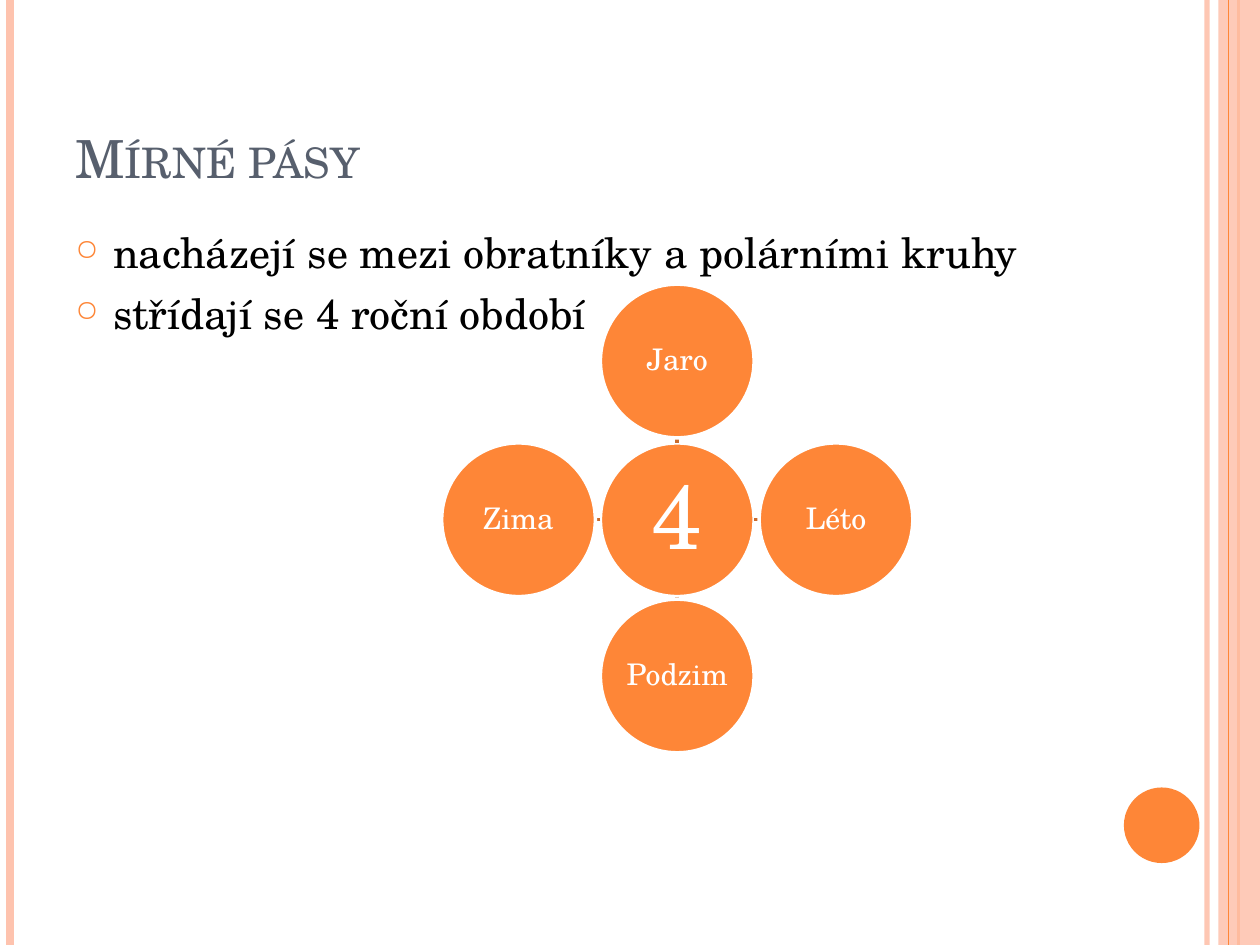
from lxml import etree
from pptx import Presentation
from pptx import util as u
from pptx.dml.color import RGBColor
from pptx.enum import shapes, text
from pptx.oxml.ns import qn

FONT = "TeX Gyre Schola"
ORANGE = RGBColor(0xFE, 0x86, 0x37)
PEACH = RGBColor(0xFE, 0xC3, 0xAE)
BROWN = RGBColor(0xCB, 0x6B, 0x2C)
SLATE = RGBColor(0x57, 0x5F, 0x6D)
BLACK = RGBColor(0, 0, 0)
WHITE = RGBColor(0xFF, 0xFF, 0xFF)

# Content
TITLE = "Mírné pásy"
BULLETS = ["nacházejí se mezi obratníky a polárními kruhy",
           "střídají se 4 roční období"]
HUB = "4"
# Season, direction across and down, distance from the hub
SEASONS = [("Jaro", 0, -1, 1.26), ("Léto", 1, 0, 1.26),
           ("Podzim", 0, 1, 1.24), ("Zima", -1, 0, 1.26)]
# Border lines: x, colour, width, opacity in percent
LINES_BELOW = [(9.58, PEACH, 3, 93), (0.08, PEACH, 4.5, 100), (9.83, ORANGE, 1.5, 100)]
LINES_ABOVE = [(9.75, ORANGE, 0.75, 100)]

# Layout
W, H = 10, 7.5
BAND = 0.33
LEFT, TEXT_W = 0.5, 8.17
HUB_X, HUB_Y, DIAMETER = 5.375, 4.125, 1.22

prs = Presentation()
prs.slide_width, prs.slide_height = u.Inches(W), u.Inches(H)
slide = prs.slides.add_slide(prs.slide_layouts[6])


def set_opacity(part, percent):
    color = part._element.spPr.find(".//" + qn("a:srgbClr"))
    etree.SubElement(color, qn("a:alpha"), val=str(percent * 1000))


def add_line(x1, y1, x2, y2, color, width, opacity=100):
    line = slide.shapes.add_connector(
        shapes.MSO_CONNECTOR.STRAIGHT, *map(u.Inches, (x1, y1, x2, y2)))
    line.line.color.rgb = color
    line.line.width = u.Pt(width)
    if opacity < 100:
        set_opacity(line, opacity)
    etree.SubElement(line._element.spPr, qn("a:effectLst"))


def add_borders(lines):
    for x, *style in lines:
        add_line(x, 0, x, H, *style)


def add_filled(kind, x, y, w, h, color):
    sp = slide.shapes.add_shape(kind, *map(u.Inches, (x, y, w, h)))
    sp.shadow.inherit = False
    sp.fill.solid()
    sp.fill.fore_color.rgb = color
    sp.line.fill.background()
    return sp


def format_runs(p, size, color):
    for r in p.runs:
        r.font.name = FONT
        r.font.size = u.Pt(size)
        r.font.color.rgb = color


def add_circle(label, cx, cy, size, inset):
    sp = add_filled(shapes.MSO_SHAPE.OVAL, cx - DIAMETER / 2, cy - DIAMETER / 2,
                    DIAMETER, DIAMETER, ORANGE)
    sp.line.color.rgb = WHITE
    sp.line.width = u.Pt(2)
    tf = sp.text_frame
    tf.margin_left = tf.margin_right = tf.margin_top = tf.margin_bottom = u.Inches(inset)
    tf.vertical_anchor = text.MSO_ANCHOR.MIDDLE
    tf.text = label
    p = tf.paragraphs[0]
    p.alignment = text.PP_ALIGN.CENTER
    p.line_spacing = 0.9
    format_runs(p, size, WHITE)


def add_text(y, h, content):
    box = slide.shapes.add_textbox(*map(u.Inches, (LEFT, y, TEXT_W, h)))
    tf = box.text_frame
    tf.word_wrap = True
    tf.text = content
    return tf


def add_bullet(p):
    p.space_before = u.Pt(6)
    pPr = p._p.get_or_add_pPr()
    pPr.set("marL", str(u.Inches(0.3)))
    pPr.set("indent", str(u.Inches(-0.3)))
    color = etree.SubElement(pPr, qn("a:buClr"))
    etree.SubElement(color, qn("a:srgbClr"), val=str(ORANGE))
    etree.SubElement(pPr, qn("a:buSzPct"), val="70000")
    etree.SubElement(pPr, qn("a:buChar"), char="○")


# Border decoration
add_borders(LINES_BELOW)
band = add_filled(shapes.MSO_SHAPE.RECTANGLE, W - BAND, 0, BAND, H, PEACH)
set_opacity(band, 87)
add_borders(LINES_ABOVE)
add_filled(shapes.MSO_SHAPE.OVAL, 8.92, 6.25, 0.6, 0.6, ORANGE)

# Title
tf = add_text(0.3, 1.25, TITLE)
tf.vertical_anchor = text.MSO_ANCHOR.BOTTOM
format_runs(tf.paragraphs[0], 30, SLATE)
for r in tf.paragraphs[0].runs:
    r.font._element.set("cap", "small")

# Bullets
tf = add_text(1.75, 5.33, "\n".join(BULLETS))
for p in tf.paragraphs:
    add_bullet(p)
    format_runs(p, 24, BLACK)

# Seasons around the hub, each with a short spoke
add_circle(HUB, HUB_X, HUB_Y, 52, 0.04)
for season, dx, dy, distance in SEASONS:
    start, end = DIAMETER / 2, distance - DIAMETER / 2
    add_line(HUB_X + dx * start, HUB_Y + dy * start,
             HUB_X + dx * end, HUB_Y + dy * end, BROWN, 2)
    add_circle(season, HUB_X + dx * distance, HUB_Y + dy * distance, 17, 0.01)

prs.save("out.pptx")
